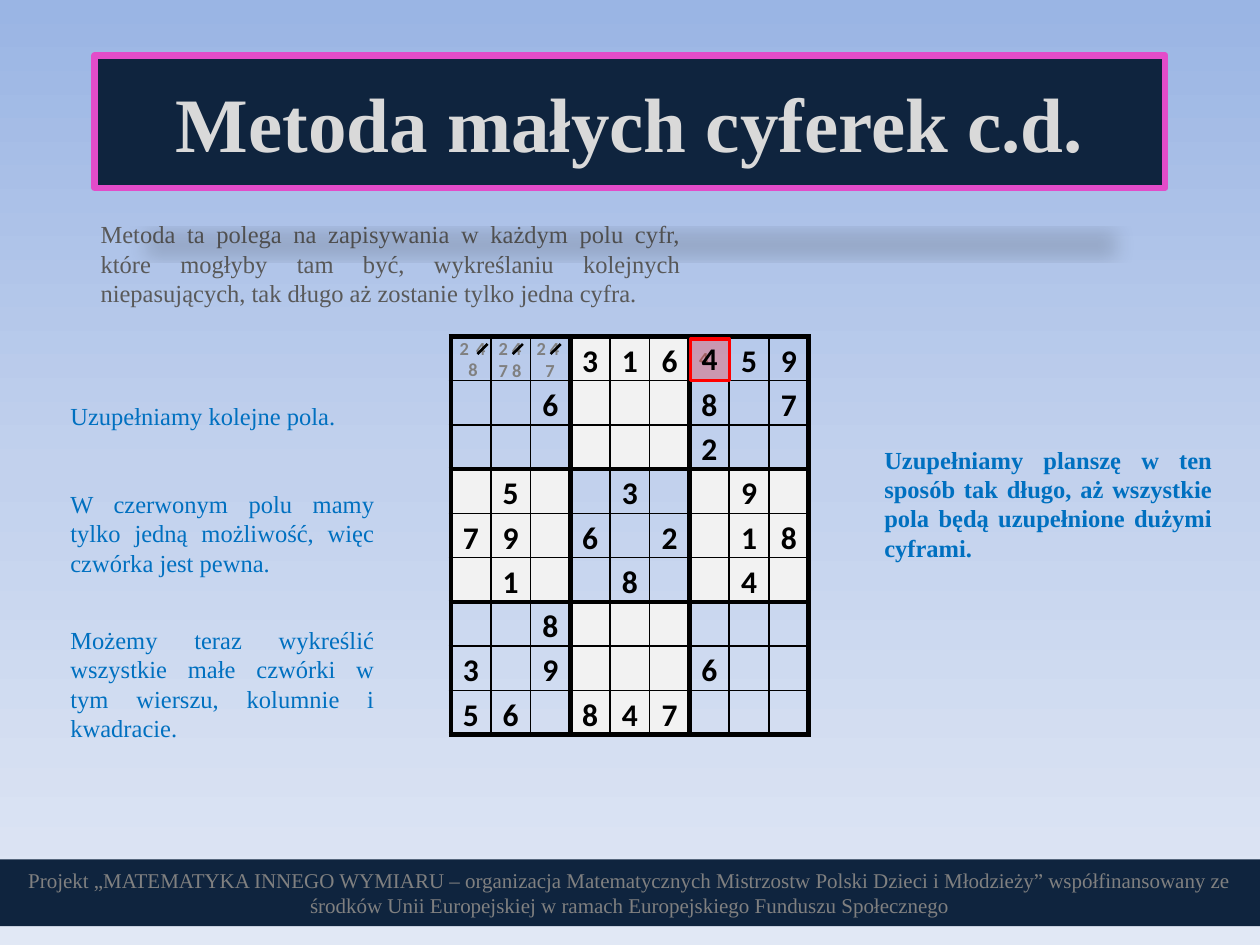
"""Build the slide on solving a sudoku board with small candidate digits."""
import copy
import dataclasses

import lxml.etree
import pptx
import pptx.dml.color
import pptx.enum.shapes
import pptx.enum.text
import pptx.oxml.ns
import pptx.util

Inches = pptx.util.Inches
Pt = pptx.util.Pt
qn = pptx.oxml.ns.qn
Align = pptx.enum.text.PP_ALIGN
Anchor = pptx.enum.text.MSO_ANCHOR


@dataclasses.dataclass(frozen=True)
class Theme:
    serif: str = "Times New Roman"
    sans: str = "Calibri"
    sky: tuple = ((0, "9AB5E4"), (0.5, "C2D1ED"), (1, "E1E8F5"))
    navy: str = "0F243E"
    pink: str = "E24CC9"
    title: str = "D9D9D9"
    intro: str = "595959"
    blue: str = "0070C0"
    gray: str = "808080"
    ink: str = "000000"
    red: str = "FF0000"
    shade: str = "F2F2F2"
    title_size: float = 44
    body_size: float = 14
    footer_size: float = 12
    digit_size: float = 18
    small_size: float = 10.5


BOARD = (
    "...316.59",
    "..6...8.7",
    "......2..",
    ".5..3..9.",
    "79.6.2.18",
    ".1..8..4.",
    "..8......",
    "3.9...6..",
    "56.847...",
)


def rgb(value):
    return pptx.dml.color.RGBColor.from_string(value)


def add_xml(parent, tag, **attributes):
    return lxml.etree.SubElement(parent, qn(tag), attributes)


def write_text(frame, text, *, size, font, color, bold=False,
               align=Align.LEFT, spacing=None, indents=()):
    frame.word_wrap = True
    for index, line in enumerate(text.split("\n")):
        para = frame.add_paragraph() if index else frame.paragraphs[0]
        para.alignment = align
        para.line_spacing = spacing
        if index < len(indents):
            properties = para._p.get_or_add_pPr()
            properties.set("marL", str(Inches(indents[index])))
            properties.set("indent", "0")
        span = para.add_run()
        span.text = line
        span.font.size = Pt(size)
        span.font.name = font
        span.font.bold = bold
        span.font.color.rgb = rgb(color)


class SlideBuilder:
    def __init__(self, slide, theme):
        self.slide = slide
        self.theme = theme

    def background(self):
        fill = self.slide.background.fill
        fill.gradient()
        fill.gradient_angle = 270
        stops = self.slide._element.find(".//" + qn("a:gsLst"))
        stops.append(copy.deepcopy(stops[0]))
        for stop, (position, color) in zip(fill.gradient_stops, self.theme.sky):
            stop.position = position
            stop.color.rgb = rgb(color)

    def text(self, left, top, width, height, text, **style):
        box = self.slide.shapes.add_textbox(
            Inches(left), Inches(top), Inches(width), Inches(height))
        write_text(box.text_frame, text, **style)

    def body(self, left, top, width, height, text, color, bold=False):
        self.text(left, top, width, height, text, size=self.theme.body_size,
                  font=self.theme.serif, color=color, bold=bold, align=Align.JUSTIFY)

    def candidate(self, left, top, width, height, text, **style):
        self.text(left, top, width, height, text, size=self.theme.small_size,
                  font=self.theme.sans, color=self.theme.gray, bold=True, **style)

    def rectangle(self, left, top, width, height, fill, line=None, line_width=1):
        shape = self.slide.shapes.add_shape(
            pptx.enum.shapes.MSO_SHAPE.RECTANGLE,
            Inches(left), Inches(top), Inches(width), Inches(height))
        shape.shadow.inherit = False
        shape.fill.solid()
        shape.fill.fore_color.rgb = rgb(fill)
        if line:
            shape.line.color.rgb = rgb(line)
            shape.line.width = Pt(line_width)
        else:
            shape.line.fill.background()
        return shape

    def banner(self, left, top, width, height, text, size, color,
               bold=False, line=None, line_width=1):
        shape = self.rectangle(left, top, width, height, self.theme.navy, line, line_width)
        shape.text_frame.vertical_anchor = Anchor.MIDDLE
        write_text(shape.text_frame, text, size=size, font=self.theme.serif,
                   color=color, bold=bold, align=Align.CENTER)
        return shape

    def floor_shadow(self, shape):
        effects = shape._element.spPr.find(qn("a:effectLst"))
        shadow = add_xml(effects, "a:outerShdw", blurRad=str(Pt(12)), dist=str(Pt(25)),
                         dir="5400000", sx="90000", sy="-19000", rotWithShape="0")
        color = add_xml(shadow, "a:srgbClr", val=self.theme.ink)
        add_xml(color, "a:alpha", val="15000")

    def highlight(self, left, top, width, height):
        shape = self.rectangle(left, top, width, height, self.theme.red, self.theme.red, 2)
        color = shape._element.spPr.find(qn("a:solidFill"))[0]
        add_xml(color, "a:alpha", val="25000")

    def strike(self, left, top, size):
        line = self.slide.shapes.add_connector(
            pptx.enum.shapes.MSO_CONNECTOR.STRAIGHT, Inches(left), Inches(top + size),
            Inches(left + size), Inches(top))
        line.line.color.rgb = rgb(self.theme.ink)
        line.line.width = Pt(1.5)
        add_xml(line._element.spPr, "a:effectLst")

    def cell_borders(self, cell, row, column):
        thick = {"L": column % 3 == 0, "R": column % 3 == 2,
                 "T": row % 3 == 0, "B": row % 3 == 2}
        for side, is_thick in thick.items():
            border = add_xml(cell._tc.get_or_add_tcPr(), f"a:ln{side}",
                             w=str(Pt(3 if is_thick else 1)))
            add_xml(add_xml(border, "a:solidFill"), "a:srgbClr", val=self.theme.ink)

    def sudoku(self, left, top, width, height, board):
        count = len(board)
        table = self.slide.shapes.add_table(
            count, count, Inches(left), Inches(top), Inches(width), Inches(height)).table
        table.first_row = table.horz_banding = False
        for row, digits in enumerate(board):
            for column, digit in enumerate(digits):
                cell = table.cell(row, column)
                cell.vertical_anchor = Anchor.MIDDLE
                cell.margin_left = cell.margin_right = Inches(0.07)
                cell.margin_top = cell.margin_bottom = 0
                self.cell_borders(cell, row, column)
                if (row // 3 + column // 3) % 2:
                    cell.fill.solid()
                    cell.fill.fore_color.rgb = rgb(self.theme.shade)
                else:
                    cell.fill.background()
                if digit != ".":
                    write_text(cell.text_frame, digit, size=self.theme.digit_size,
                               font=self.theme.sans, color=self.theme.ink, bold=True,
                               align=Align.CENTER, spacing=1.15)


def main():
    deck = pptx.Presentation()
    deck.slide_width, deck.slide_height = Inches(10), Inches(7.5)
    theme = Theme()
    page = SlideBuilder(deck.slides.add_slide(deck.slide_layouts[6]), theme)
    page.background()
    page.sudoku(3.58, 2.67, 2.84, 3.16, BOARD)
    page.body(0.7, 1.69, 4.8, 0.81, "Metoda ta polega na zapisywania w każdym polu cyfr, które mogłyby tam być, wykreślaniu kolejnych niepasujących, tak długo aż zostanie tylko jedna cyfra.", theme.intro)
    for left, top, digit in ((3.55, 2.63, "2"), (3.68, 2.63, "4"), (3.62, 2.79, "8")):
        page.candidate(left, top, 0.24, 0.28, digit)
    page.candidate(3.86, 2.63, 0.41, 0.45, "2 4\n7 8")
    page.candidate(4.16, 2.63, 0.41, 0.45, "2 4\n7", indents=(0, 0.07))
    page.candidate(5.38, 2.71, 0.41, 0.28, "4", align=Align.CENTER)
    page.highlight(5.48, 2.69, 0.31, 0.33)
    page.text(5.47, 2.64, 0.35, 0.4, "4", size=theme.digit_size,
              font=theme.sans, color=theme.ink, bold=True)
    for top, height, note in (
        (3.13, 0.34, "Uzupełniamy kolejne pola."),
        (3.83, 0.81, "W czerwonym polu mamy tylko jedną możliwość, więc czwórka jest pewna."),
        (4.91, 1.04, "Możemy teraz wykreślić wszystkie małe czwórki w tym wierszu, kolumnie i kwadracie."),
    ):
        page.body(0.46, top, 2.61, height, note, theme.blue)
    for left in (3.79, 4.07, 4.37):
        page.strike(left, 2.73, 0.08)
    page.body(6.92, 3.48, 2.8, 1.04, "Uzupełniamy planszę w ten sposób tak długo, aż wszystkie pola będą uzupełnione dużymi cyframi.", theme.blue, bold=True)
    page.banner(0, 6.82, 10, 0.53, "Projekt „MATEMATYKA INNEGO WYMIARU – organizacja Matematycznych Mistrzostw Polski Dzieci i Młodzieży” współfinansowany ze środków Unii Europejskiej w ramach Europejskiego Funduszu Społecznego", theme.footer_size, theme.gray)
    title = page.banner(0.75, 0.44, 8.5, 1.05, "Metoda małych cyferek c.d.", theme.title_size,
                        theme.title, bold=True, line=theme.pink, line_width=3.5)
    page.floor_shadow(title)
    deck.save("out.pptx")


if __name__ == "__main__":
    main()
